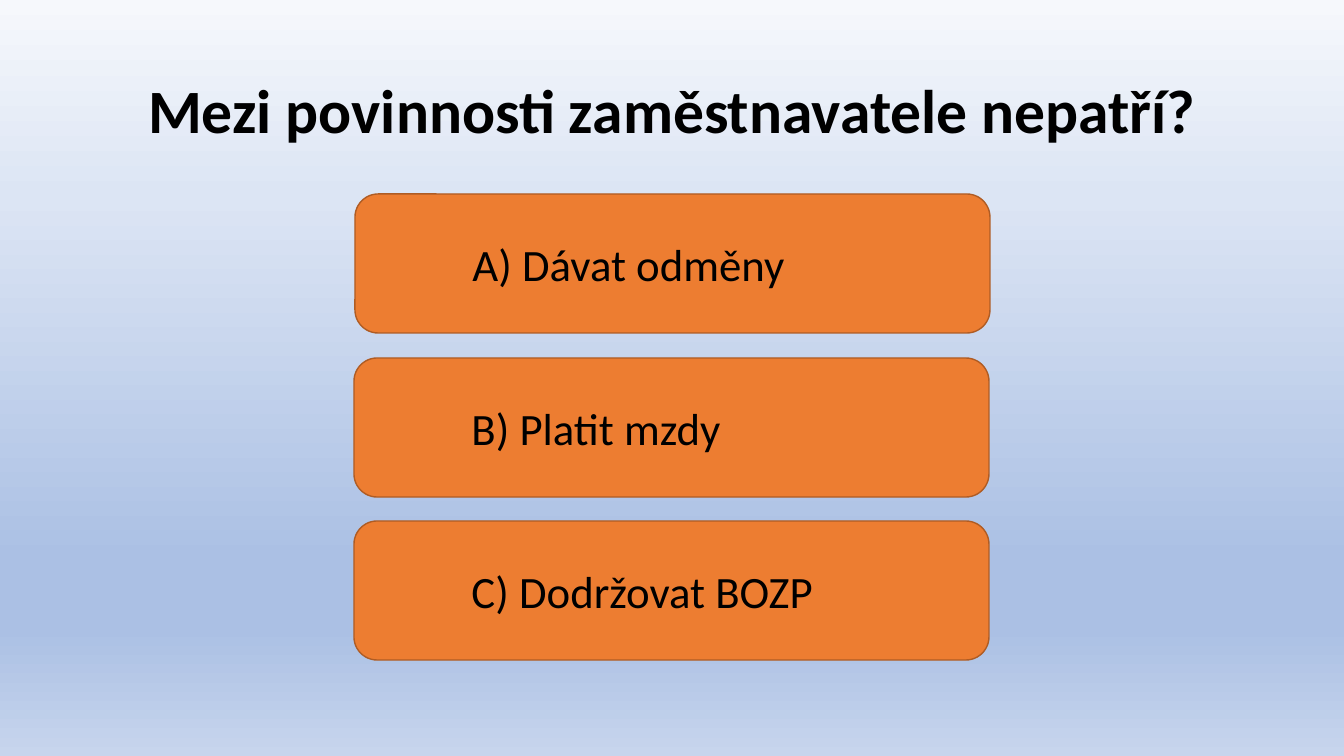
from copy import deepcopy

from lxml.etree import SubElement
from pptx import Presentation
from pptx.dml.color import RGBColor
from pptx.enum.shapes import MSO_SHAPE as Shape
from pptx.enum.text import MSO_ANCHOR as Anchor, PP_ALIGN as Align
from pptx.oxml.ns import qn
from pptx.util import Inches, Pt

PX = 914400 / 100.8


def px(*lengths):
    """Turn pixel lengths into EMU."""
    return [round(length * PX) for length in lengths]


def style_text(frame, text, size, align, bold=False):
    frame.word_wrap = True
    frame.vertical_anchor = Anchor.MIDDLE
    para = frame.paragraphs[0]
    para.text = text
    para.alignment = align
    para.font.name = "Calibri"
    para.font.size = Pt(size)
    para.font.bold = bold
    para.font.color.rgb = RGBColor.from_string("000000")
    return para


deck = Presentation()
deck.slide_width, deck.slide_height = px(1344, 756)
page = deck.slides.add_slide(deck.slide_layouts[6])

# Background: vertical gradient with five stops
SKY = [(0, "F6F8FC"), (0.26, "DCE5F4"), (0.74, "ABC0E4"),
       (0.83, "ABC0E4"), (1, "C7D5ED")]
sky_fill = page.background.fill
sky_fill.gradient()
sky_fill.gradient_angle = 270
stop_list = page._element.find(".//" + qn("a:gsLst"))
while len(stop_list) < len(SKY):
    stop_list.append(deepcopy(stop_list[0]))
for stop, (position, color) in zip(sky_fill.gradient_stops, SKY):
    stop.position = position
    stop.color.rgb = RGBColor.from_string(color)

# Question
question = page.shapes.add_textbox(*px(93, 41, 1159, 146))
para = style_text(question.text_frame, "Mezi povinnosti zaměstnavatele nepatří?",
                  44, Align.CENTER, bold=True)
para.line_spacing = 0.9

# Answers, one below the other, with the text at a one-inch tab stop
ANSWERS = [(355, 194, "A) Dávat odměny"), (354, 358, "B) Platit mzdy"),
           (354, 521, "C) Dodržovat BOZP")]
for left, top, text in ANSWERS:
    box = page.shapes.add_shape(Shape.ROUNDED_RECTANGLE, *px(left, top, 635, 139))
    box.shadow.inherit = False
    box.fill.solid()
    box.fill.fore_color.rgb = RGBColor.from_string("ED7D31")
    box.line.color.rgb = RGBColor.from_string("AF5C24")
    box.line.width = Pt(1)
    para = style_text(box.text_frame, "\t" + text, 32, Align.LEFT)
    settings = para._p.get_or_add_pPr()
    tabs = SubElement(settings, qn("a:tabLst"))
    SubElement(tabs, qn("a:tab"), pos=str(Inches(1)), algn="l")
    settings.insert(0, tabs)

deck.save("out.pptx")
